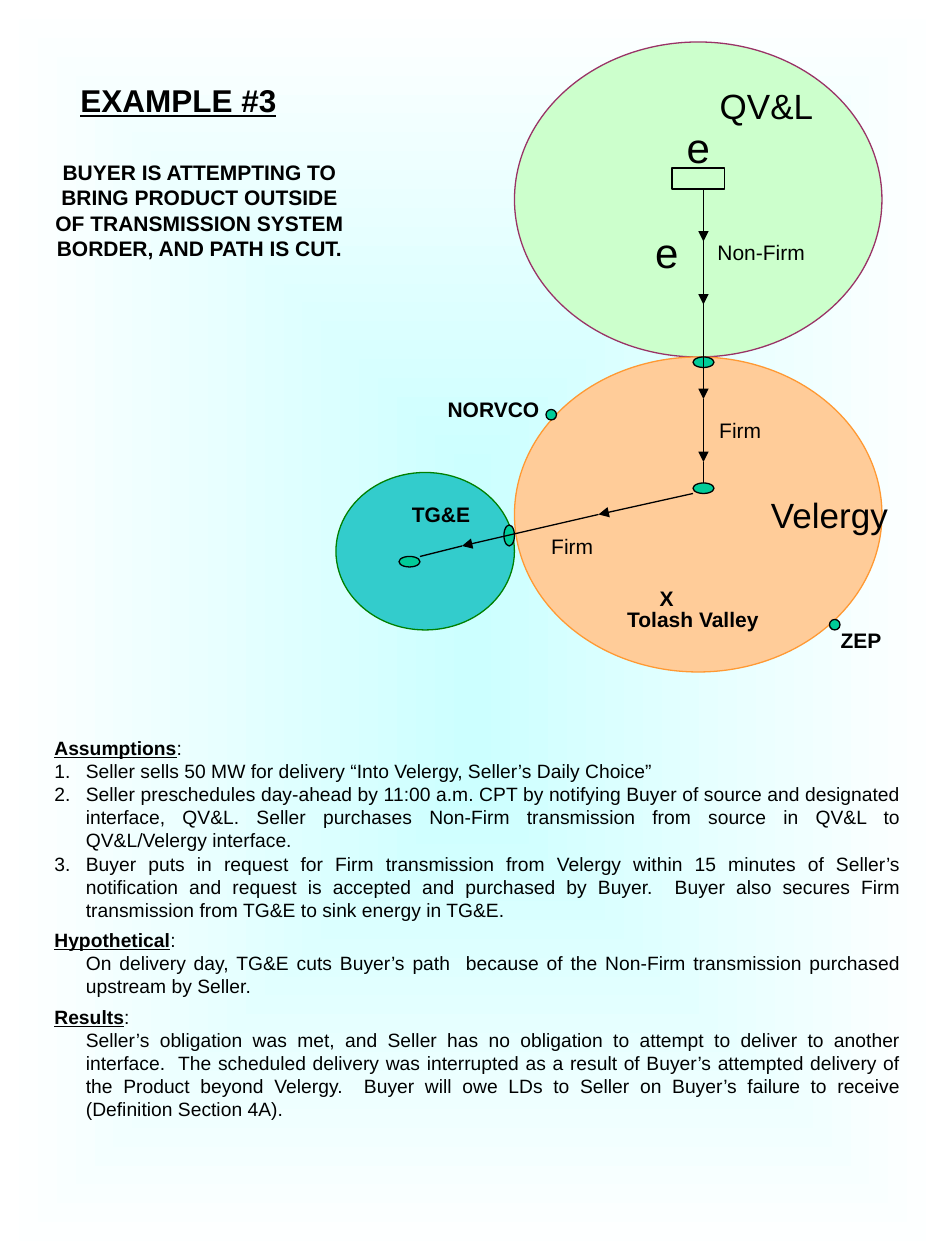
from lxml import etree
from pptx import Presentation
from pptx import util as u
from pptx.dml.color import RGBColor
from pptx.enum import shapes, text
from pptx.oxml.ns import qn

BLACK = "000000"
NODE_GREEN = "00CC99"
LINE_WIDTH = 0.75
BODY_SIZE = 11
INDENT = 18
OVAL = shapes.MSO_SHAPE.OVAL
NODE = shapes.MSO_SHAPE.FLOWCHART_CONNECTOR

# left, top, width, height, fill, line
SYSTEMS = [
    (192, 270, 102, 90, "33CCCC", "008000"),
    (294, 24, 210, 180, "CCFFCC", "993366"),
    (294, 204, 210, 180, "FFCC99", "FF9933"),
]
NODES = [
    (312, 234, 6, 6),
    (474, 354, 6, 6),
    (288, 300, 6, 12),
    (396, 204, 12, 6),
    (396, 276, 12, 6),
    (228, 318, 12, 6),
]
# Each path runs from source to sink; its last leg has no arrowhead
PATHS = [
    [(402, 108), (402, 138), (402, 174), (402, 228), (402, 264), (402, 276)],
    [(396, 282), (342, 294), (264, 312), (240, 318)],
]
# wording, left, top, width, height, size, bold; each box holds its text on one line
LABELS = [
    ("QV&L", 396, 48, 84, 24, 20, False),
    ("e", 381, 78, 36, 12, 24, False),
    ("e", 363, 138, 36, 12, 24, False),
    ("Non-Firm", 396, 138, 78, 12, 12, False),
    ("Velergy", 427, 282, 94, 24, 20, False),
    ("ZEP", 464, 354, 56, 24, 12, True),
    ("Tolash Valley", 340, 348, 112, 12, 12, True),
    ("TG&E", 222, 282, 60, 24, 12, True),
    ("NORVCO", 242, 222, 80, 24, 12, True),
    ("X", 366, 336, 30, 12, 12, True),
    ("Firm", 398, 240, 50, 12, 12, False),
    ("Firm", 302, 306, 50, 12, 12, False),
]
SUMMARY = (
    "BUYER IS ATTEMPTING TO BRING PRODUCT OUTSIDE OF TRANSMISSION SYSTEM "
    "BORDER, AND PATH IS CUT."
)
# heading, space before, numbered, paragraphs
SECTIONS = [
    ("Assumptions", 0, True, [
        "Seller sells 50 MW for delivery “Into Velergy, Seller’s Daily Choice”",
        "Seller preschedules day-ahead by 11:00 a.m. CPT by notifying Buyer of "
        "source and designated interface, QV&L. Seller purchases Non-Firm "
        "transmission from source in QV&L to QV&L/Velergy interface.",
        "Buyer puts in request for Firm transmission from Velergy within 15 "
        "minutes of Seller’s notification and request is accepted and purchased "
        "by Buyer.  Buyer also secures Firm transmission from TG&E to sink "
        "energy in TG&E.",
    ]),
    ("Hypothetical", 4.1, False, [
        "On delivery day, TG&E cuts Buyer’s path  because of the Non-Firm "
        "transmission purchased upstream by Seller.",
    ]),
    ("Results", 4.1, False, [
        "Seller’s obligation was met, and Seller has no obligation to attempt to "
        "deliver to another interface.  The scheduled delivery was interrupted "
        "as a result of Buyer’s attempted delivery of the Product beyond "
        "Velergy.  Buyer will owe LDs to Seller on Buyer’s failure to receive "
        "(Definition Section 4A).",
    ]),
]


def color(value):
    return RGBColor.from_string(value)


def points(*values):
    return [u.Pt(value) for value in values]


def set_background(slide):
    """Spread the gradient from the centre of the slide to its edges."""
    fill = slide.background.fill
    fill.gradient()
    for stop, value in zip(fill.gradient_stops, ("CCFFFF", "FFFFFF")):
        stop.color.rgb = color(value)
    gradient = next(slide.element.iter(qn("a:gradFill")))
    gradient.remove(gradient.find(qn("a:lin")))
    center = etree.SubElement(gradient, qn("a:path"), {"path": "rect"})
    etree.SubElement(center, qn("a:fillToRect"), dict.fromkeys("ltrb", "50000"))


def add_outline(slide, kind, box, fill, line):
    shape = slide.shapes.add_shape(kind, *points(*box))
    shape.shadow.inherit = False
    if fill:
        shape.fill.solid()
        shape.fill.fore_color.rgb = color(fill)
    else:
        shape.fill.background()
    shape.line.color.rgb = color(line)
    shape.line.width = u.Pt(LINE_WIDTH)


def add_leg(slide, start, end, arrow):
    connector = slide.shapes.add_connector(
        shapes.MSO_CONNECTOR.STRAIGHT, *points(*start, *end))
    connector.line.color.rgb = color(BLACK)
    connector.line.width = u.Pt(LINE_WIDTH)
    if arrow:
        line = connector.line._get_or_add_ln()
        etree.SubElement(line, qn("a:tailEnd"), type="triangle")
    etree.SubElement(connector._element.spPr, qn("a:effectLst"))


def add_path(slide, stations):
    legs = list(zip(stations, stations[1:]))
    for start, end in legs:
        add_leg(slide, start, end, arrow=(start, end) != legs[-1])


def add_frame(slide, box):
    frame = slide.shapes.add_textbox(*points(*box)).text_frame
    frame.word_wrap = True
    frame.vertical_anchor = text.MSO_ANCHOR.MIDDLE
    return frame


def format_run(run, size, bold=False, underline=False):
    font = run.font
    font.name = "Arial"
    font.size = u.Pt(size)
    font.bold = bold
    font.underline = underline
    font.color.rgb = color(BLACK)


def add_label(slide, wording, box, size, bold, underline=False):
    frame = add_frame(slide, box)
    frame.text = wording
    paragraph = frame.paragraphs[0]
    paragraph.alignment = text.PP_ALIGN.CENTER
    format_run(paragraph.runs[0], size, bold, underline)


def indent(paragraph, numbered):
    properties = paragraph._p.get_or_add_pPr()
    properties.set("marL", str(u.Pt(INDENT)))
    properties.set("indent", str(u.Pt(-INDENT if numbered else 0)))
    if numbered:
        etree.SubElement(properties, qn("a:buFont"), typeface="Arial")
        etree.SubElement(properties, qn("a:buAutoNum"), type="arabicPeriod")


def add_discussion(slide, box):
    frame = add_frame(slide, box)
    for heading, space, numbered, entries in SECTIONS:
        first = heading == SECTIONS[0][0]
        paragraph = frame.paragraphs[0] if first else frame.add_paragraph()
        paragraph.space_before = u.Pt(space)
        for wording, strong in ((heading, True), (":", False)):
            run = paragraph.add_run()
            run.text = wording
            format_run(run, BODY_SIZE, bold=strong, underline=strong)
        for entry in entries:
            paragraph = frame.add_paragraph()
            paragraph.text = entry
            paragraph.alignment = text.PP_ALIGN.JUSTIFY
            indent(paragraph, numbered)
            format_run(paragraph.runs[0], BODY_SIZE)


def main():
    presentation = Presentation()
    presentation.slide_width, presentation.slide_height = points(540, 720)
    slide = presentation.slides.add_slide(presentation.slide_layouts[6])
    set_background(slide)
    for *box, fill, line in SYSTEMS:
        add_outline(slide, OVAL, box, fill, line)
    add_outline(slide, shapes.MSO_SHAPE.RECTANGLE, (384, 96, 30, 12), None, BLACK)
    for box in NODES:
        add_outline(slide, NODE, box, NODE_GREEN, BLACK)
    for stations in PATHS:
        add_path(slide, stations)
    for wording, *box, size, bold in LABELS:
        add_label(slide, wording, box, size, bold)
    add_label(slide, "EXAMPLE #3", (30, 42, 144, 30), 18, True, underline=True)
    add_label(slide, SUMMARY, (18, 78, 192, 84), 12, True)
    add_discussion(slide, (24, 396, 498, 269))
    presentation.save("out.pptx")


if __name__ == "__main__":
    main()
